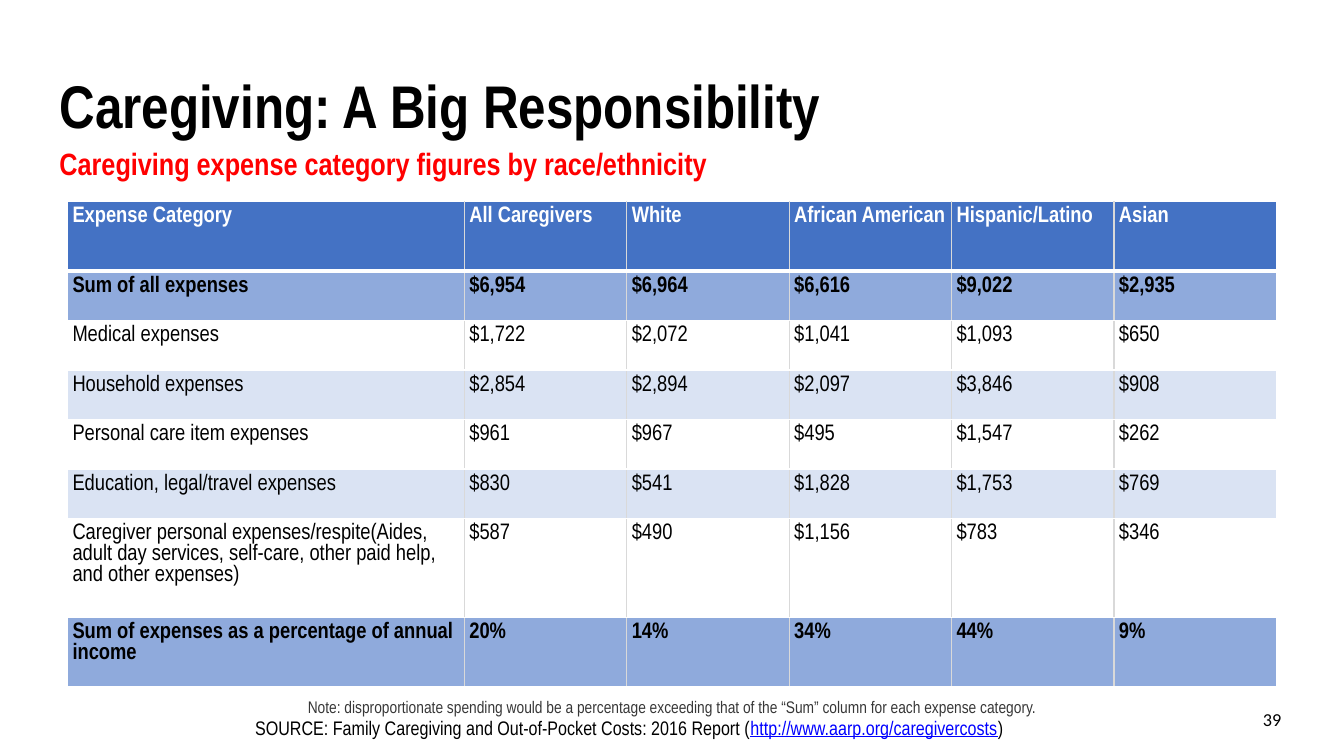
from dataclasses import dataclass

from lxml import etree
from pptx import Presentation
from pptx.dml.color import RGBColor
from pptx.enum.text import MSO_ANCHOR, MSO_AUTO_SIZE, PP_ALIGN
from pptx.oxml.ns import qn
from pptx.util import Pt

TOP, MIDDLE = MSO_ANCHOR.TOP, MSO_ANCHOR.MIDDLE
LEFT, CENTER, RIGHT = PP_ALIGN.LEFT, PP_ALIGN.CENTER, PP_ALIGN.RIGHT
GROW, FIXED = MSO_AUTO_SIZE.SHAPE_TO_FIT_TEXT, MSO_AUTO_SIZE.NONE
NARROW = "Arial Narrow"
BLACK, WHITE, GRID = "000000", "FFFFFF", "D9D9D9"
HEAD, TOTAL, BAND = "4472C4", "8FAADC", "DAE3F3"
PAD = 3.6


@dataclass
class Run:
    text: str
    size: float
    color: str = BLACK
    bold: bool = False
    under: bool = False
    font: str = NARROW


@dataclass
class Label:
    place: tuple[float, float, float, float]
    runs: list[Run]
    align: PP_ALIGN = LEFT
    anchor: MSO_ANCHOR = TOP
    pad: float = PAD
    wrap: bool = True
    space: float = 1.0


@dataclass
class Row:
    height: float
    texts: list[str]
    fill: str | None = None
    color: str = BLACK
    bold: bool = False


TITLE = Label((38.9, 49, 877.7, 58.3),
              [Run("Caregiving: A Big Responsibility", 43, bold=True)],
              anchor=MIDDLE, space=0.9)
LABELS = [
    Label((38.9, 101.5, 877.7, 33.1),
          [Run("Caregiving expense category figures by race/ethnicity", 22, "FF0000", True)],
          anchor=MIDDLE, space=0.9),
    Label((48.2, 493.9, 864, 20.9),
          [Run("Note: disproportionate spending would be a percentage exceeding "
               "that of the “Sum” column for each expense category.", 12, "373737")],
          align=CENTER),
    Label((182.2, 511.2, 539.3, 17.3),
          [Run("SOURCE: Family Caregiving and Out-of-Pocket Costs: 2016 Report (", 14),
           Run("http://www.aarp.org/caregivercosts", 14, "0000FF", under=True),
           Run(")", 14)],
          pad=0, wrap=False),
    Label((888.8, 502.6, 30, 22.3), [Run("39", 13, font="Calibri")],
          align=RIGHT, anchor=MIDDLE),
]

COLS = [283.5] + [116] * 5
ROWS = [
    Row(49.5, ["Expense Category", "All Caregivers", "White", "African American",
               "Hispanic/Latino", "Asian"], HEAD, WHITE, True),
    Row(35.4, ["Sum of all expenses", "$6,954", "$6,964", "$6,616", "$9,022", "$2,935"],
        TOTAL, bold=True),
    Row(35.4, ["Medical expenses", "$1,722", "$2,072", "$1,041", "$1,093", "$650"]),
    Row(35.4, ["Household expenses", "$2,854", "$2,894", "$2,097", "$3,846", "$908"], BAND),
    Row(35.4, ["Personal care item expenses", "$961", "$967", "$495", "$1,547", "$262"]),
    Row(35.4, ["Education, legal/travel expenses", "$830", "$541", "$1,828", "$1,753", "$769"],
        BAND),
    Row(70.6, ["Caregiver personal expenses/respite(Aides, adult day services, self-care, "
               "other paid help, and other expenses)", "$587", "$490", "$1,156", "$783", "$346"]),
    Row(49.5, ["Sum of expenses as a percentage of annual income", "20%", "14%", "34%", "44%",
               "9%"], TOTAL, bold=True),
]


def rgb(code: str) -> RGBColor:
    return RGBColor.from_string(code)


def add_run(para, item: Run) -> None:
    run = para.add_run()
    run.text = item.text
    font = run.font
    font.name, font.size, font.bold = item.font, Pt(item.size), item.bold
    font.underline = item.under
    font.color.rgb = rgb(item.color)


def set_pad(box, pad: float) -> None:
    box.margin_left = box.margin_right = Pt(pad)
    box.margin_top = box.margin_bottom = Pt(pad)


def write(shape, label: Label, size: MSO_AUTO_SIZE) -> None:
    shape.left, shape.top, shape.width, shape.height = map(Pt, label.place)
    frame = shape.text_frame
    set_pad(frame, label.pad)
    frame.word_wrap = label.wrap
    frame.auto_size = size
    frame.vertical_anchor = label.anchor
    para = frame.paragraphs[0]
    para.alignment = label.align
    para.line_spacing = label.space
    for item in label.runs:
        add_run(para, item)


def add_edge(cell, side: str, color: str, width: float) -> None:
    props = cell._tc.get_or_add_tcPr()
    line = etree.SubElement(props, qn(f"a:ln{side}"), w=str(Pt(width)))
    fill = etree.SubElement(line, qn("a:solidFill"))
    etree.SubElement(fill, qn("a:srgbClr"), val=color)


def add_grid(slide) -> None:
    frame = slide.shapes.add_table(len(ROWS), len(COLS), Pt(48.2), Pt(144),
                                   Pt(sum(COLS)), Pt(sum(row.height for row in ROWS)))
    table = frame.table
    table.first_row = table.horz_banding = False
    for col, width in zip(table.columns, COLS):
        col.width = Pt(width)
    last = len(COLS) - 1
    for r, row in enumerate(ROWS):
        table.rows[r].height = Pt(row.height)
        for c, text in enumerate(row.texts):
            cell = table.cell(r, c)
            set_pad(cell, PAD)
            add_run(cell.text_frame.paragraphs[0], Run(text, 16, row.color, row.bold))
            add_edge(cell, "L", GRID if c else WHITE, 1)
            add_edge(cell, "R", GRID if c < last else WHITE, 1)
            add_edge(cell, "T", WHITE, 3 if r == 1 else 1)
            add_edge(cell, "B", WHITE, 3 if r == 0 else 1)
            if row.fill:
                cell.fill.solid()
                cell.fill.fore_color.rgb = rgb(row.fill)
            else:
                cell.fill.background()


def main() -> None:
    deck = Presentation()
    deck.slide_width, deck.slide_height = Pt(960), Pt(540)
    slide = deck.slides.add_slide(deck.slide_layouts[5])
    write(slide.shapes.title, TITLE, FIXED)
    add_grid(slide)
    for label in LABELS:
        box = slide.shapes.add_textbox(*map(Pt, label.place))
        write(box, label, GROW)
    deck.save("out.pptx")


if __name__ == "__main__":
    main()
